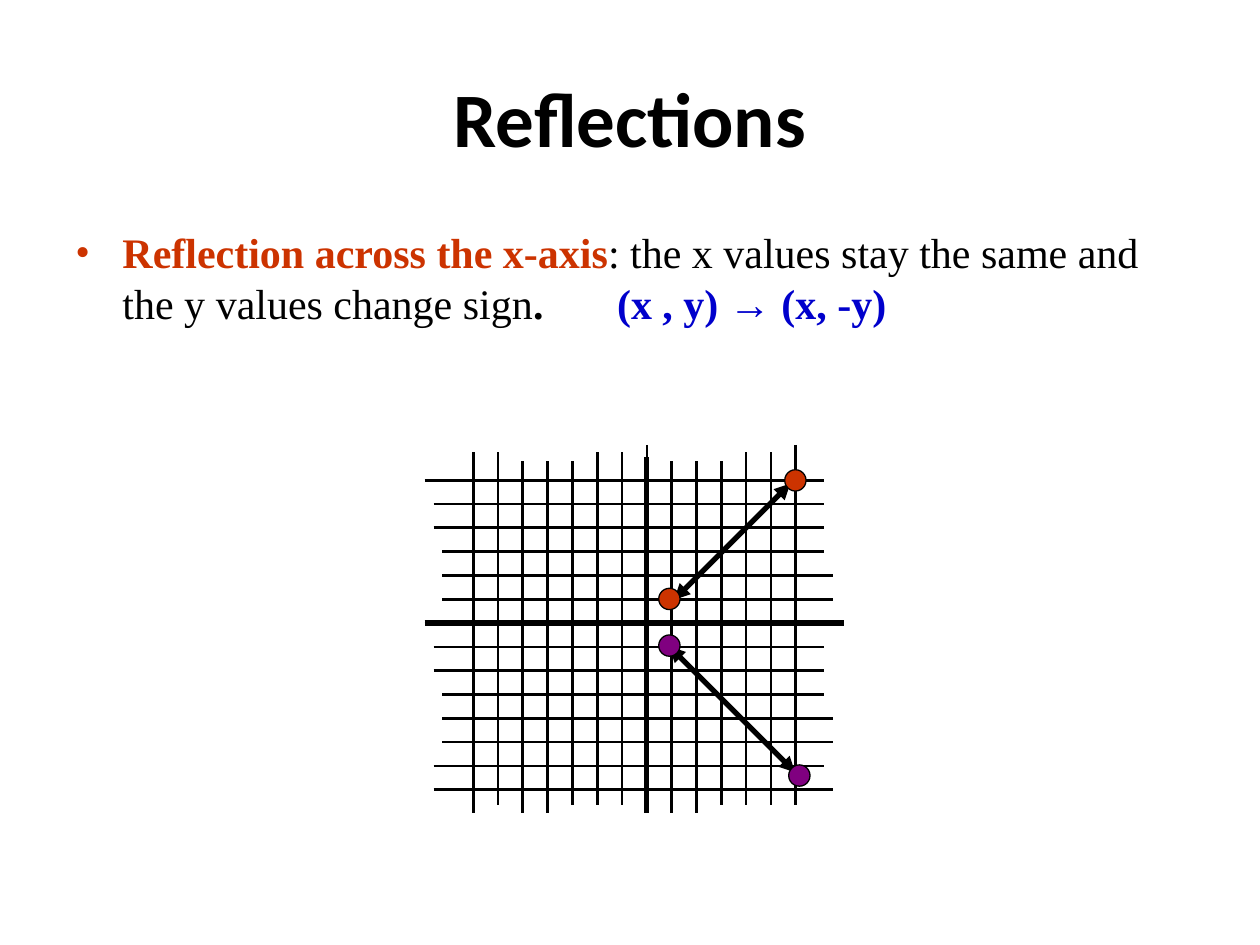
"""Build a slide on reflection across the x-axis with a coordinate grid."""
from lxml import etree
from pptx import Presentation
from pptx import util as u
from pptx.dml.color import RGBColor
from pptx.enum import shapes, text
from pptx.oxml import ns

COLORS = {"black": "000000", "red": "CC3300", "blue": "0000CC", "purple": "800080"}


def add_line(slide, start, end, width, arrows=False):
    line = slide.shapes.add_connector(
        shapes.MSO_CONNECTOR.STRAIGHT, *(u.Cm(value) for value in (*start, *end)))
    line.line.color.rgb = RGBColor.from_string(COLORS["black"])
    line.line.width = u.Pt(width)
    properties = line._element.spPr
    if arrows:
        outline = properties.find(ns.qn("a:ln"))
        for tag in ("a:headEnd", "a:tailEnd"):
            etree.SubElement(outline, ns.qn(tag), type="triangle")
    etree.SubElement(properties, ns.qn("a:effectLst"))


def add_point(slide, left, top, color):
    size = u.Cm(0.43)
    point = slide.shapes.add_shape(
        shapes.MSO_SHAPE.OVAL, u.Cm(left), u.Cm(top), size, size)
    point.shadow.inherit = False
    point.fill.solid()
    point.fill.fore_color.rgb = RGBColor.from_string(COLORS[color])
    point.line.color.rgb = RGBColor.from_string(COLORS["black"])
    point.line.width = u.Pt(0.75)


presentation = Presentation()
presentation.slide_width = u.Cm(25.4)
presentation.slide_height = u.Cm(19.05)
slide = presentation.slides.add_slide(presentation.slide_layouts[5])

title = slide.shapes.title
title.left, title.top, title.width, title.height = (
    u.Cm(value) for value in (1.27, 0.76, 22.86, 3.18))
title.text_frame.text = "Reflections"
title.text_frame.vertical_anchor = text.MSO_ANCHOR.MIDDLE
paragraph = title.text_frame.paragraphs[0]
paragraph.alignment = text.PP_ALIGN.CENTER
font = paragraph.runs[0].font
font.name, font.size, font.bold = "Calibri", u.Pt(44), True
font.color.rgb = RGBColor.from_string(COLORS["black"])

rule = slide.shapes.add_textbox(u.Cm(1.27), u.Cm(4.45), u.Cm(22.86), u.Cm(3.84))
rule.text_frame.word_wrap = True
paragraph = rule.text_frame.paragraphs[0]
paragraph.space_before = u.Pt(3)
indent = u.Cm(0.95)
properties = paragraph._p.get_or_add_pPr()
properties.set("marL", str(indent))
properties.set("indent", str(-indent))
bullet_color = etree.SubElement(properties, ns.qn("a:buClr"))
etree.SubElement(bullet_color, ns.qn("a:srgbClr"), val=COLORS["red"])
etree.SubElement(properties, ns.qn("a:buFont"), typeface="Times New Roman")
etree.SubElement(properties, ns.qn("a:buChar"), char="•")

for words, color, bold, spacing in (
    ("Reflection across the x-axis", "red", True, 0),
    (": the x values stay the same and the y values change sign", "black", False, 0),
    (".", "black", True, 0),
    (" ", "black", True, 36),
    ("(x , y) → (x, -y)", "blue", True, 0),
):
    run = paragraph.add_run()
    run.text = words
    run.font.name, run.font.size, run.font.bold = "Times New Roman", u.Pt(24), bold
    run.font.color.rgb = RGBColor.from_string(COLORS[color])
    if spacing:
        run._r.get_or_add_rPr().set("spc", str(spacing * 100))

row_cycle = [(8.56, 16.61)] + [(8.74, 16.61)] * 2 + [(8.92, 16.61)] + [(8.92, 16.79)] * 2
row_spans = row_cycle + row_cycle + [(8.74, 16.61), (8.74, 16.79)]
for row, (left, right) in enumerate(row_spans):
    y = 9.68 + 0.48 * row
    add_line(slide, (left, y), (right, y), 1.5)

column_cycle = [(9.3, 16.38)] * 2 + [(9.3, 16.23)] + [(9.12, 16.23)] * 2 + [(8.97, 16.23)]
column_spans = [(9.12, 16.38), (9.12, 16.23)] + column_cycle * 2
for column, (top, bottom) in enumerate(column_spans):
    x = 9.54 + 0.5 * column
    add_line(slide, (x, top), (x, bottom), 1.5)

add_line(slide, (8.56, 12.56), (17.02, 12.56), 3)
add_line(slide, (13.04, 9.22), (13.04, 16.38), 3)

for start, end, color, corners in (
    ((15.93, 9.75), (13.59, 12.09), "red", ((15.82, 9.47), (13.28, 11.86))),
    ((13.49, 13.03), (16.03, 15.57), "purple", ((13.28, 12.8), (15.9, 15.42))),
):
    add_line(slide, start, end, 3, arrows=True)
    for left, top in corners:
        add_point(slide, left, top, color)

presentation.save("out.pptx")
